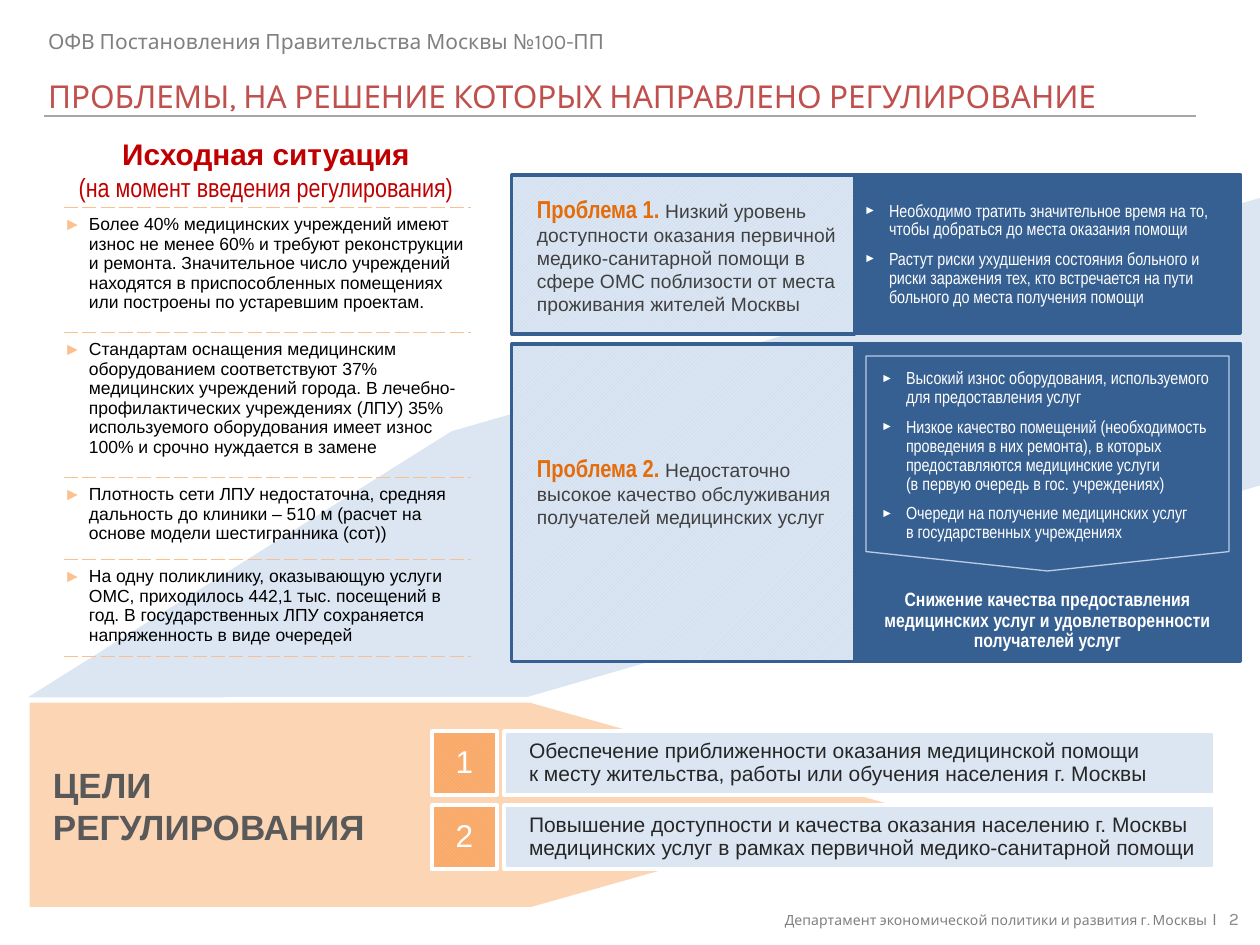
from lxml import etree
from pptx import Presentation
from pptx import util as u
from pptx.dml.color import RGBColor
from pptx.enum import dml, shapes, text
from pptx.oxml.ns import qn

PX = 914400 / 126
RECT, PLATE = shapes.MSO_SHAPE.RECTANGLE, shapes.MSO_SHAPE.PENTAGON
TOP, MID, LOW = text.MSO_ANCHOR.TOP, text.MSO_ANCHOR.MIDDLE, text.MSO_ANCHOR.BOTTOM
LEFT, MID_AL, RIGHT = text.PP_ALIGN.LEFT, text.PP_ALIGN.CENTER, text.PP_ALIGN.RIGHT
PAT = dml.MSO_PATTERN


class Theme:
    sans, thin, head = "Arial", "Arial Narrow", "Karla"
    white, black, ink, body, dark = "FFFFFF", "000000", "262626", "404040", "595959"
    gray, page, rule = "808080", "8C8C8C", "A6A6A6"
    red, deep, label = "C0504D", "C00000", "E46C0A"
    blue, pale, hatch, edge = "376092", "DCE6F2", "C0D5EE", "B9CDE5"
    peach, sand, badge = "FCD5B5", "FAC090", "F9A967"
    tiny, small, note, mid, lead, sub, top, title, goal = 8, 10, 11, 12, 14, 15, 17, 18, 20


T = Theme()


def px(n):
    return u.Emu(round(n * PX))


def rgb(code):
    return RGBColor.from_string(code)


def bullet(para, color, size):
    """Add a hanging triangle bullet; size is a percentage of the text."""
    props = para._p.get_or_add_pPr()
    props.set("marL", str(px(25)))
    props.set("indent", str(-px(25)))
    tint = etree.SubElement(props, qn("a:buClr"))
    etree.SubElement(tint, qn("a:srgbClr"), val=color)
    etree.SubElement(props, qn("a:buSzPct"), val=str(size * 1000))
    etree.SubElement(props, qn("a:buFont"), typeface=T.sans)
    etree.SubElement(props, qn("a:buChar"), char="►")


def write(frame, paras, align=LEFT, space=None, after=None, mark=None):
    """Fill a frame; each paragraph is a list of (text, size, font, color, bold)."""
    for i, runs in enumerate(paras):
        para = frame.add_paragraph() if i else frame.paragraphs[0]
        para.alignment = align
        if space:
            para.line_spacing = space
        if after:
            para.space_after = u.Pt(after)
        if mark:
            bullet(para, *mark)
        for words, size, font, color, bold in runs:
            for j, line in enumerate(words.split("\n")):
                if j:
                    para.add_line_break()
                if line:
                    run = para.add_run()
                    run.text = line
                    run.font.size, run.font.name, run.font.bold = u.Pt(size), font, bold
                    run.font.color.rgb = rgb(color)


def setup(frame, ins, anchor):
    frame.word_wrap = True
    frame.vertical_anchor = anchor
    (frame.margin_left, frame.margin_top,
     frame.margin_right, frame.margin_bottom) = map(px, ins)


def label(slide, box, runs, anchor=TOP, ins=(13, 6, 13, 6), **style):
    frame = slide.shapes.add_textbox(*map(px, box)).text_frame
    setup(frame, ins, anchor)
    write(frame, [runs], **style)


def block(slide, kind, box, fill, line, width, paras=(), ins=(0, 0, 0, 0),
          anchor=MID, adj=None, **style):
    """Draw a shape; fill is a color, None, or (pattern, front, back)."""
    shape = slide.shapes.add_shape(kind, *map(px, box))
    shape.shadow.inherit = False
    if adj is not None:
        shape.adjustments[0] = adj
    if fill is None:
        shape.fill.background()
    elif isinstance(fill, tuple):
        shape.fill.patterned()
        shape.fill.pattern = fill[0]
        shape.fill.fore_color.rgb, shape.fill.back_color.rgb = map(rgb, fill[1:])
    else:
        shape.fill.solid()
        shape.fill.fore_color.rgb = rgb(fill)
    shape.line.color.rgb = rgb(line)
    shape.line.width = u.Pt(width)
    setup(shape.text_frame, ins, anchor)
    write(shape.text_frame, paras, **style)
    return shape


def rule(slide, x, y, end):
    line = slide.shapes.add_connector(shapes.MSO_CONNECTOR.STRAIGHT, *map(px, (x, y, end, y)))
    line.line.color.rgb = rgb(T.rule)
    line.line.width = u.Pt(1.5)
    etree.SubElement(line._element.spPr, qn("a:effectLst"))


def border(cell):
    """Dash the top and bottom edges and clear the sides."""
    for i, side in enumerate(("lnL", "lnR", "lnT", "lnB")):
        edge = etree.Element(qn("a:" + side), w=str(u.Pt(0.25)))
        cell._tc.get_or_add_tcPr().insert(i, edge)
        if i < 2:
            etree.SubElement(edge, qn("a:noFill"))
        else:
            ink = etree.SubElement(edge, qn("a:solidFill"))
            etree.SubElement(ink, qn("a:srgbClr"), val=T.sand)
            etree.SubElement(edge, qn("a:prstDash"), val="dash")


def facts(slide, x, y, width, rows):
    """Lay out a one-column table from (height, text) rows."""
    total = sum(high for high, _ in rows)
    table = slide.shapes.add_table(len(rows), 1, *map(px, (x, y, width, total))).table
    table.first_row = table.horz_banding = False
    for i, (high, words) in enumerate(rows):
        table.rows[i].height = px(high)
        cell = table.cell(i, 0)
        cell.fill.background()
        border(cell)
        cell.margin_left = cell.margin_right = 0
        cell.margin_top = px(8)
        cell.margin_bottom = px(5 if i == len(rows) - 1 else 8)
        write(cell.text_frame, [[(words, T.small, T.sans, T.black, False)]], mark=(T.sand, 100))


def points(*lines):
    return [[(line, T.small, T.thin, T.white, False)] for line in lines]


def problem(slide, num, y, high, pat, words, pad, paras, **side):
    block(slide, RECT, (854, y, 387, high), T.blue, T.blue, 1.75, paras,
          space=0.9, after=6, **side)
    block(slide, PLATE, (512, y, 343, high), (pat, T.hatch, T.pale), T.blue, 1.75,
          [[(f"Проблема {num}. ", T.lead, T.thin, T.label, True),
            (words, T.note, T.sans, T.body, False)]], pad, adj=0)


def goal(slide, num, words):
    y = 731 + 74 * (num - 1)
    block(slide, RECT, (504, y, 711, 64), T.pale, T.white, 2,
          [[(words, T.mid, T.sans, T.ink, False)]], (25, 5, 10, 5), space=0.9)
    block(slide, RECT, (432, y, 65, 64), (PAT.LIGHT_DOWNWARD_DIAGONAL, T.sand, T.badge),
          T.white, 2, [[(str(num), T.title, T.sans, T.white, False)]], (1, 1, 1, 1),
          align=MID_AL, space=0.9)


def main():
    deck = Presentation()
    deck.slide_width, deck.slide_height = px(1260), px(945)
    slide = deck.slides.add_slide(deck.slide_layouts[6])

    block(slide, PLATE, (28, 701, 871, 208), T.peach, T.white, 2,
          [[("ЦЕЛИ\nРЕГУЛИРОВАНИЯ", T.goal, T.sans, T.dark, True)]], (25, 5, 20, 5), adj=1.77)
    sweep = block(slide, PLATE, (-5, 374, 1336, 280), T.pale, T.white, 2, adj=1.74)
    sweep.rotation = 163.9

    label(slide, (35, 71, 1191, 50), [("ПРОБЛЕМЫ, НА РЕШЕНИЕ КОТОРЫХ НАПРАВЛЕНО РЕГУЛИРОВАНИЕ",
                                       T.title, T.head, T.red, False)])
    rule(slide, 44, 116, 1196)
    label(slide, (35, 23, 912, 38), [("ОФВ Постановления Правительства Москвы №100-ПП",
                                      T.mid, T.head, T.gray, False)])
    label(slide, (632, 908, 598, 20),
          [("Департамент экономической политики и развития г. Москвы",
            T.tiny, T.head, T.gray, False), (" I", T.small, T.head, T.gray, False)],
          MID, align=RIGHT)
    label(slide, (1220, 908, 32, 20), [("2", T.small, T.head, T.page, False)],
          MID, (0, 6, 13, 6), align=RIGHT)

    problem(slide, 1, 175, 159, PAT.LIGHT_UPWARD_DIAGONAL,
            "Низкий уровень доступности оказания первичной медико-санитарной помощи "
            "в сфере ОМС поблизости от места проживания жителей Москвы", (25, 10, 15, 10),
            points("Необходимо тратить значительное время на то, чтобы добраться "
                   "до места оказания помощи",
                   "Растут риски ухудшения состояния больного и риски заражения тех, "
                   "кто встречается на пути больного до места получения помощи"),
            ins=(10, 6, 13, 6), mark=(T.white, 70))
    problem(slide, 2, 344, 318, PAT.DARK_UPWARD_DIAGONAL,
            "Недостаточно высокое качество обслуживания получателей медицинских услуг",
            (25, 10, 20, 35),
            [[("Снижение качества предоставления\nмедицинских услуг и "
               "удовлетворенности получателей услуг", T.note, T.thin, T.white, True)]],
            ins=(5, 5, 5, 10), anchor=LOW, align=MID_AL)

    facts(slide, 64, 207, 407, [
        (125, "Более 40% медицинских учреждений имеют износ не менее 60% и требуют "
              "реконструкции и ремонта. Значительное число учреждений находятся в "
              "приспособленных помещениях или построены по устаревшим проектам."),
        (145, "Стандартам оснащения медицинским оборудованием соответствуют 37% "
              "медицинских учреждений города. В лечебно-профилактических учреждениях "
              "(ЛПУ) 35% используемого оборудования имеет износ 100% и срочно "
              "нуждается в замене"),
        (82, "Плотность сети ЛПУ недостаточна, средняя дальность до клиники – 510 м "
             "(расчет на основе модели шестигранника (сот))"),
        (89, "На одну поликлинику, оказывающую услуги ОМС, приходилось 442,1 тыс. посещений "
             "в год. В государственных ЛПУ сохраняется напряженность в виде очередей")])
    label(slide, (35, 117, 462, 110),
          [("Исходная ситуация\n", T.top, T.sans, T.deep, True),
           ("(на момент введения регулирования)", T.sub, T.thin, T.deep, False)],
          MID, (10, 20, 10, 25), align=MID_AL)

    goal(slide, 1, "Обеспечение приближенности оказания медицинской помощи\n"
                   "к месту жительства, работы или обучения населения г. Москвы")
    goal(slide, 2, "Повышение доступности и качества оказания населению г. Москвы "
                   "медицинских услуг в рамках первичной медико-санитарной помощи")

    causes = block(
        slide, PLATE, (940, 282, 215, 363), None, T.edge, 0.75,
        points("Высокий износ оборудования, используемого для предоставления услуг",
               "Низкое качество помещений (необходимость проведения в них ремонта), в которых "
               "предоставляются медицинские услуги\n(в первую очередь в гос. учреждениях)",
               "Очереди на получение медицинских услуг\nв государственных учреждениях"),
        (20, 15, 25, 15), adj=0.09, space=0.9, after=6, mark=(T.white, 70))
    causes.rotation = 90
    causes.text_frame._txBody.bodyPr.set("vert", "vert270")
    deck.save("out.pptx")


if __name__ == "__main__":
    main()
